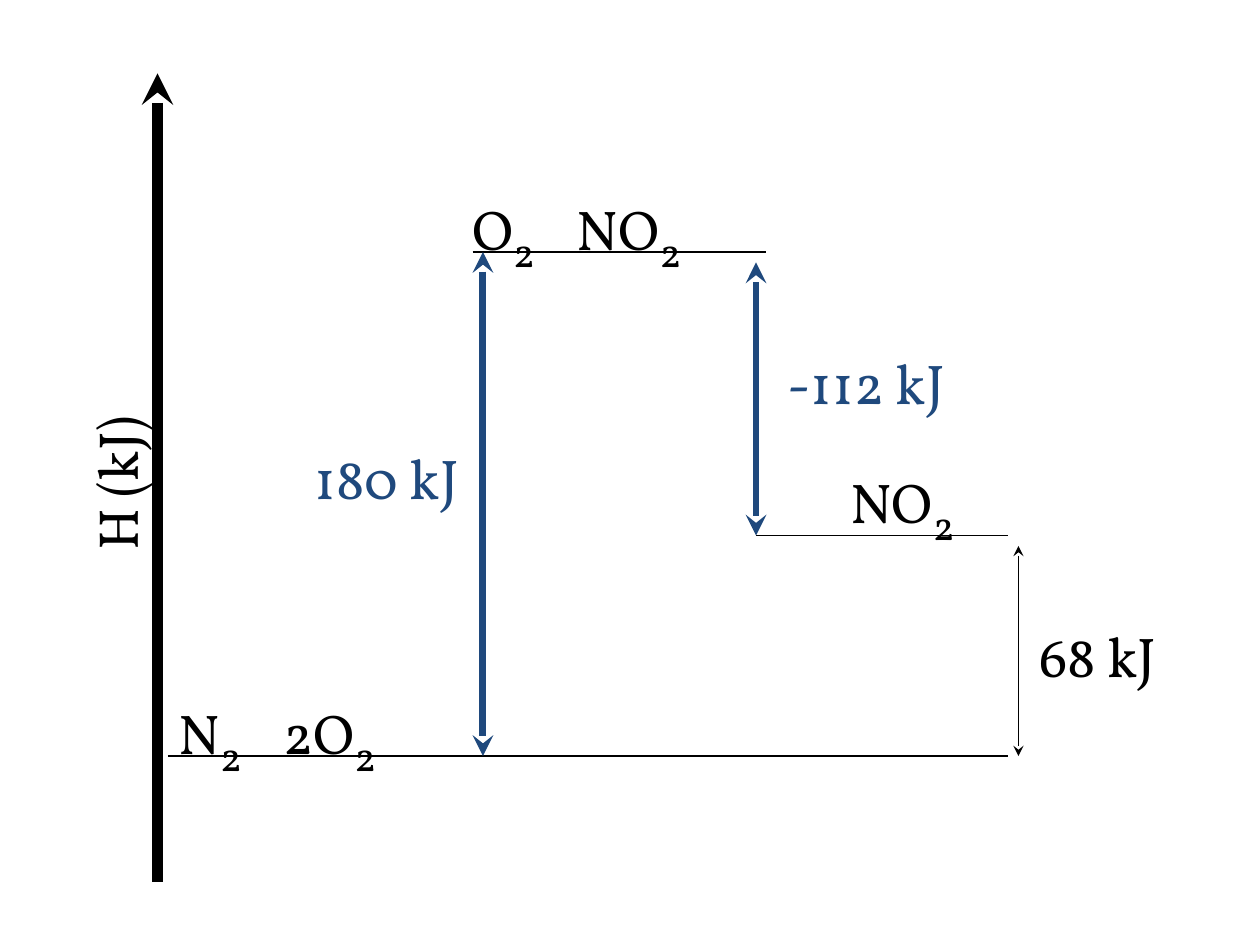
"""Draws an enthalpy diagram for the two-step formation of NO₂."""
from dataclasses import dataclass

from lxml import etree
from pptx import Presentation
from pptx import util as u
from pptx.dml.color import RGBColor
from pptx.enum import shapes, text
from pptx.oxml.ns import qn
from pptx.slide import Slide

COLORS = {"ink": "000000", "step": "1F497D"}
FONT = "Vollkorn"
LABEL_HEIGHT = 45.4
BODY_SIZE, SUBSCRIPT_SIZE = 32, 40
REACTANTS_Y, INTERMEDIATE_Y, PRODUCT_Y = 432, 144, 306
REACTANTS_TOP, INTERMEDIATE_TOP, MIDDLE_TOP = 387.4, 99.4, 249.8


@dataclass(frozen=True)
class Label:
    words: str
    left: float
    top: float
    width: float
    subscript: str = ""
    color: str = "ink"
    rotation: float = 0


@dataclass(frozen=True)
class Stroke:
    x1: float
    y1: float
    x2: float
    y2: float
    weight: float = 1
    color: str = "ink"
    arrows: tuple[str, ...] = ()


BOTH_ENDS = ("headEnd", "tailEnd")

STROKES = [
    Stroke(96, REACTANTS_Y, 576, REACTANTS_Y),
    Stroke(270, INTERMEDIATE_Y, 438, INTERMEDIATE_Y),
    Stroke(432, PRODUCT_Y, 576, PRODUCT_Y),
    Stroke(276, INTERMEDIATE_Y, 276, REACTANTS_Y, 4, "step", BOTH_ENDS),
    Stroke(432, 150, 432, PRODUCT_Y, 4, "step", BOTH_ENDS),
    Stroke(582, 312, 582, REACTANTS_Y, arrows=BOTH_ENDS),
    Stroke(90, 42, 90, 504, 6, arrows=("headEnd",)),
]

LABELS = [
    Label("N", 95, REACTANTS_TOP, 54.7, "2"),
    Label("2O", 154.8, REACTANTS_TOP, 69.1, "2"),
    Label("O", 262.8, INTERMEDIATE_TOP, 53.3, "2"),
    Label("NO", 322.6, INTERMEDIATE_TOP, 79.9, "2"),
    Label("NO", 478.8, 255.6, 79.9, "2"),
    Label("68 kJ", 586.8, 351.4, 82.8),
    Label("180 kJ", 172.8, MIDDLE_TOP, 99.4, color="step"),
    Label("-112 kJ", 442.8, 195.8, 109.4, color="step"),
    Label("H (kJ)", 16.6, MIDDLE_TOP, 98.6, rotation=270),
]


def draw_stroke(slide: Slide, stroke: Stroke) -> None:
    ends = (u.Pt(v) for v in (stroke.x1, stroke.y1, stroke.x2, stroke.y2))
    connector = slide.shapes.add_connector(shapes.MSO_CONNECTOR.STRAIGHT, *ends)
    connector.line.width = u.Pt(stroke.weight)
    connector.line.color.rgb = RGBColor.from_string(COLORS[stroke.color])
    outline = connector.line._get_or_add_ln()
    for end in stroke.arrows:
        etree.SubElement(outline, qn(f"a:{end}"), type="stealth")
    etree.SubElement(connector._element.spPr, qn("a:effectLst"))


def draw_label(slide: Slide, label: Label) -> None:
    box = slide.shapes.add_textbox(
        u.Pt(label.left), u.Pt(label.top), u.Pt(label.width), u.Pt(LABEL_HEIGHT)
    )
    box.rotation = label.rotation
    box.text_frame.word_wrap = False
    box.text_frame.auto_size = text.MSO_AUTO_SIZE.SHAPE_TO_FIT_TEXT
    paragraph = box.text_frame.paragraphs[0]
    paragraph.font.name = FONT
    paragraph.font.size = u.Pt(BODY_SIZE)
    paragraph.font.color.rgb = RGBColor.from_string(COLORS[label.color])
    paragraph.add_run().text = label.words
    if label.subscript:
        subscript = paragraph.add_run()
        subscript.text = label.subscript
        subscript.font.size = u.Pt(SUBSCRIPT_SIZE)
        subscript._r.get_or_add_rPr().set("baseline", "-25000")


def main() -> None:
    deck = Presentation()
    deck.slide_width, deck.slide_height = u.Pt(720), u.Pt(540)
    slide = deck.slides.add_slide(deck.slide_layouts[6])
    for stroke in STROKES:
        draw_stroke(slide, stroke)
    for label in LABELS:
        draw_label(slide, label)
    deck.save("out.pptx")


if __name__ == "__main__":
    main()
